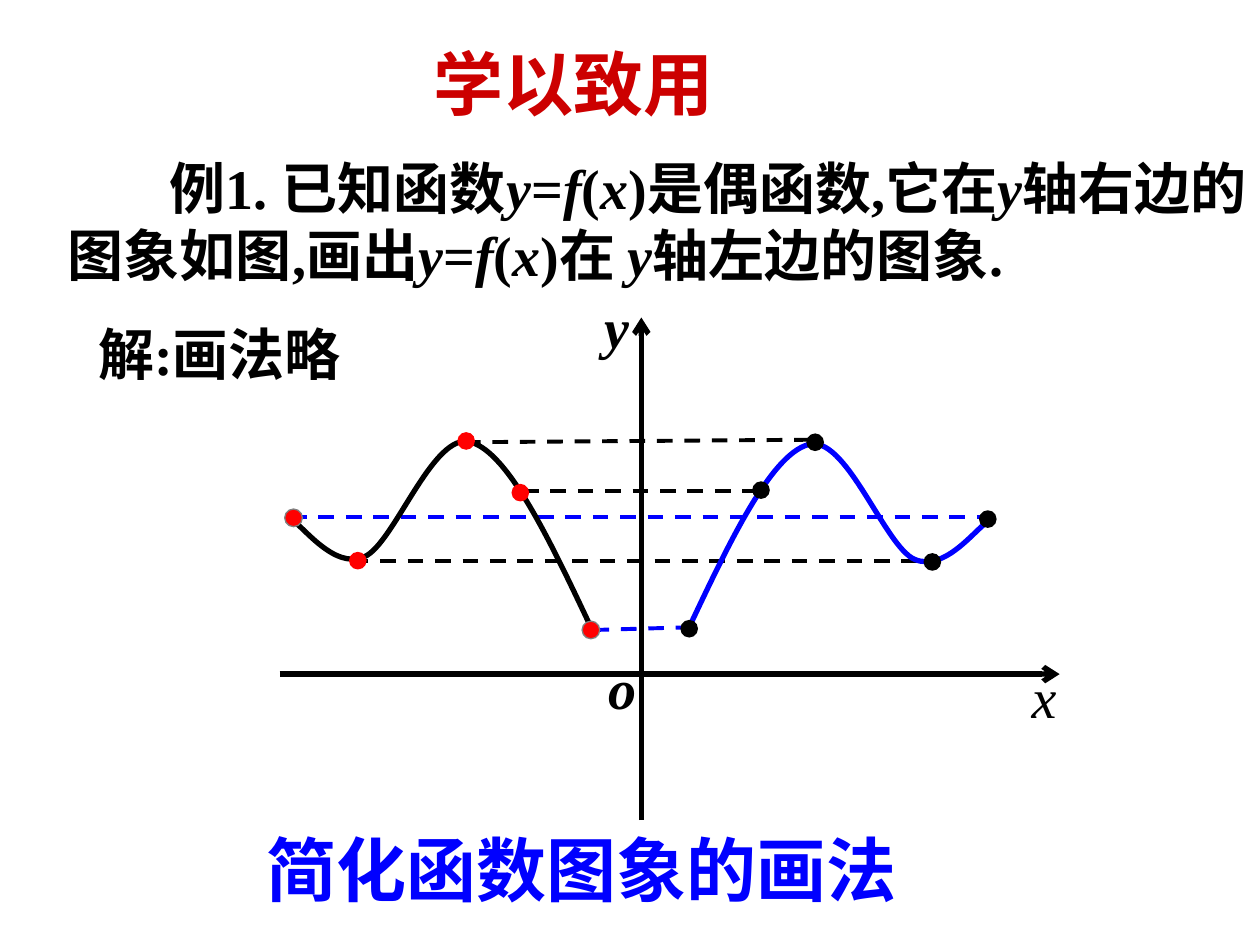
from lxml import etree
from pptx import Presentation
from pptx.dml.color import RGBColor
from pptx.enum.dml import MSO_LINE
from pptx.enum.shapes import MSO_CONNECTOR, MSO_SHAPE
from pptx.oxml.ns import qn
from pptx.util import Inches, Pt

DASH = MSO_LINE.DASH
STRAIGHT = MSO_CONNECTOR.STRAIGHT
OVAL = MSO_SHAPE.OVAL
COLORS = {name: RGBColor.from_string(value) for name, value in {
    "black": "000000", "blue": "0000FF", "red": "FF0000",
    "title": "CC0000", "gray": "808080"}.items()}
SERIF, CJK = "Times New Roman", "Noto Sans CJK SC"

prs = Presentation()
prs.slide_width, prs.slide_height = Inches(10), Inches(7.5)
s = prs.slides.add_slide(prs.slide_layouts[6])


def add_line(x1, y1, x2, y2, color, width):
    line = s.shapes.add_connector(STRAIGHT, *map(Inches, (x1, y1, x2, y2)))
    line.line.color.rgb = COLORS[color]
    line.line.width = Pt(width)
    etree.SubElement(line._element.spPr, qn("a:effectLst"))
    return line.line


def add_text(box, runs, color="black", font=SERIF, size=32, bold=True):
    """Add one paragraph; runs are (text, italic) pairs."""
    tf = s.shapes.add_textbox(*map(Inches, box)).text_frame
    tf.word_wrap = True
    p = tf.paragraphs[0]
    for text, italic in runs:
        r = p.add_run()
        r.text = text
        formats = {"name": font, "size": Pt(size), "bold": bold, "italic": italic}
        for key, value in formats.items():
            setattr(r.font, key, value)
        r.font.color.rgb = COLORS[color]
        etree.SubElement(r._r.get_or_add_rPr(), qn("a:ea")).set("typeface", CJK)
    return tf


# Dashed lines joining mirrored points
for x1, y1, x2, y2, color in [
    (4.71, 5, 5.42, 4.98, "blue"),
    (4.15, 3.9, 6.03, 3.9, "black"),
    (3.69, 3.51, 6.46, 3.49, "black"),
    (2.8, 4.45, 7.44, 4.45, "black"),
    (2.31, 4.1, 7.86, 4.1, "blue"),
]:
    add_line(x1, y1, x2, y2, color, 2.25).dash_style = DASH

# Right curve and its mirror image: a start point, then Bezier triples
curve = [(5.45, 5.02), (5.78, 4.32), (6.11, 3.62), (6.41, 3.53), (6.71, 3.43),
         (7.02, 4.34), (7.26, 4.44), (7.5, 4.54), (7.74, 4.2), (7.84, 4.14)]
mirrored = [(10.15 - x, y - 0.02) for x, y in curve]
for points, color in [(curve, "blue"), (mirrored, "black")]:
    start, *rest = [(Inches(x), Inches(y)) for x, y in points]
    builder = s.shapes.build_freeform(*start)
    builder.add_line_segments(rest, close=False)
    sp = builder.convert_to_shape()
    sp.shadow.inherit = False
    sp.fill.background()
    sp.line.color.rgb = COLORS[color]
    sp.line.width = Pt(3)
    segments = list(sp._element.iter(qn("a:lnTo")))
    outline = segments[0].getparent()
    for i in range(0, len(segments), 3):
        bezier = etree.SubElement(outline, qn("a:cubicBezTo"))
        for segment in segments[i:i + 3]:
            bezier.append(segment[0])
            outline.remove(segment)

# Axes
for ends in [(2.22, 5.35, 8.41, 5.35), (5.09, 6.51, 5.09, 2.52)]:
    axis = add_line(*ends, "black", 3)
    etree.SubElement(axis._get_or_add_ln(), qn("a:tailEnd")).set("type", "arrow")

# Axis labels
for x, y, label, bold in [(4.73, 5.14, "o", True), (4.7, 2.27, "y", True),
                          (8.09, 5.21, "x", False)]:
    add_text((x, y, 0.6, 0.63), [(label, True)], bold=bold)

# Points on the curves
DOT = 0.14
black_dots = [(5.4, 4.92), (5.97, 3.82), (6.4, 3.44), (7.33, 4.39), (7.77, 4.05)]
red_dots = [(4.62, 4.93), (4.06, 3.84), (3.63, 3.43), (2.77, 4.38), (2.26, 4.04)]
outlined = [red_dots[0], red_dots[-1]]
for dots, color in [(black_dots, "black"), (red_dots, "red")]:
    for dot in dots:
        sp = s.shapes.add_shape(OVAL, *map(Inches, (*dot, DOT, DOT)))
        sp.shadow.inherit = False
        sp.fill.solid()
        sp.fill.fore_color.rgb = COLORS[color]
        if dot in outlined:
            sp.line.color.rgb = COLORS["gray"]
            sp.line.width = Pt(0.75)
        else:
            sp.line.fill.background()

# Title, problem, solution and closing line
tf = add_text((3.33, 0.26, 2.59, 1.46), [("学以致用", False)], "title", "Arial", 40)
for side, inset in {"left": 0.11, "top": 0.06, "right": 0.11, "bottom": 0.06}.items():
    setattr(tf, f"margin_{side}", Inches(inset))

formula = [("y", True), ("=", False), ("f", True), ("(", False), ("x", True)]
tf = add_text((0.44, 1.17, 9.56, 1.17), [
    ("例1. 已知函数", False), *formula, (")是偶函数,它在", False), ("y", True),
    ("轴右边的图象如图,画出", False), *formula, (")在 ", False), ("y", True),
    ("轴左边的图象.", False)])
tf.paragraphs[0]._p.get_or_add_pPr().set("indent", str(Inches(0.81)))

add_text((0.68, 2.49, 2.68, 0.63), [("解:画法略", False)])
add_text((2.02, 6.51, 5.49, 0.77), [("简化函数图象的画法", False)], "blue", CJK, 40)

prs.save("out.pptx")
